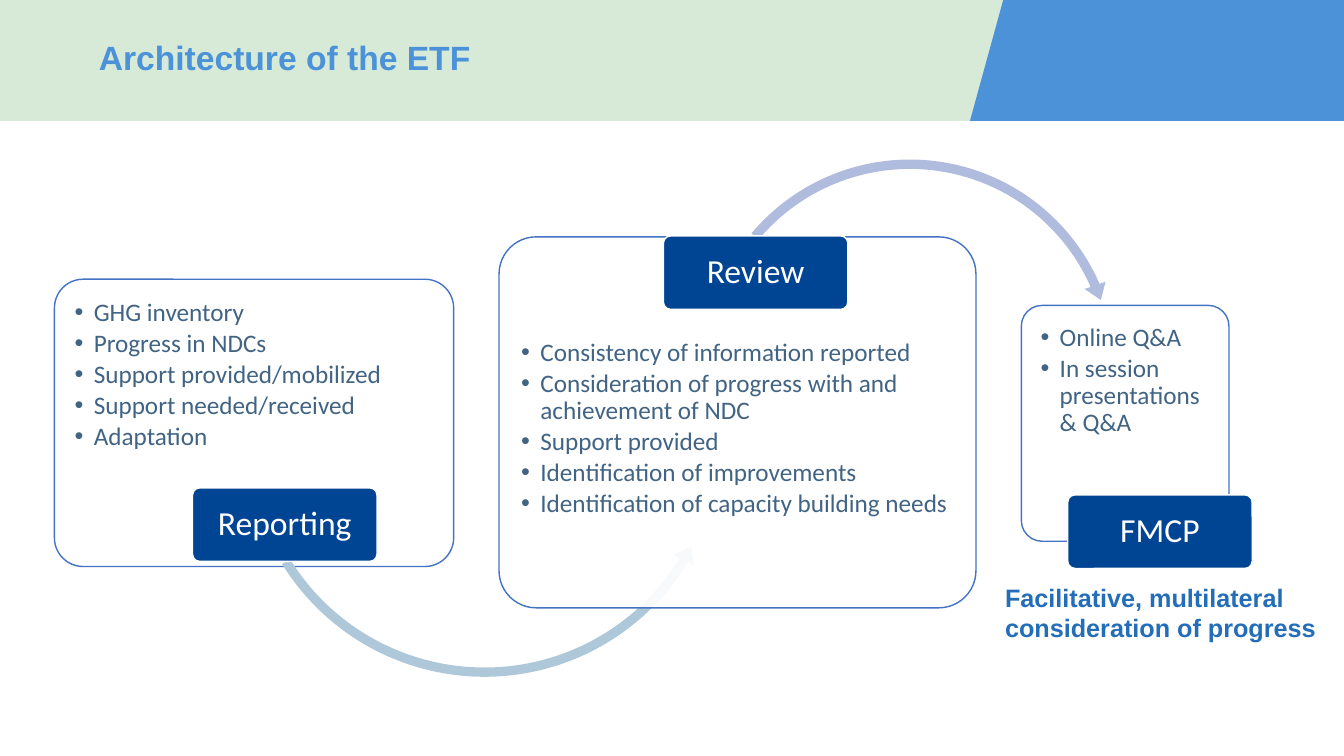
from lxml import etree
from pptx import Presentation
from pptx.dml.color import RGBColor
from pptx.enum.shapes import MSO_SHAPE
from pptx.enum.text import MSO_ANCHOR, PP_ALIGN
from pptx.oxml.ns import qn
from pptx.util import Inches, Pt

PALE_GREEN = RGBColor(0xD7, 0xEA, 0xD7)
SKY = RGBColor(0x4B, 0x92, 0xD8)
CAPTION_BLUE = RGBColor(0x24, 0x6E, 0xB9)
OUTLINE = RGBColor(0x44, 0x72, 0xC4)
NAVY = RGBColor(0x00, 0x44, 0x94)
SLATE = RGBColor(0x41, 0x64, 0x84)
TEAL = RGBColor(0xAE, 0xC8, 0xD9)
LILAC = RGBColor(0xB0, 0xBC, 0xDE)
WHITE = RGBColor(0xFF, 0xFF, 0xFF)

TITLE = "Architecture of the ETF"
CAPTION = "Facilitative, multilateral consideration of progress"
LABEL_SIZE = (1.83, 0.73)
BULLET_INDENT = Inches(0.19)

# Boxes are left, top, width, height; arrow adjustments follow the preset's order.
STAGES = [
    {
        "label": "Reporting", "label_at": (1.91, 4.84),
        "panel": (0.54, 2.77, 3.96, 2.85), "list": (0.6, 2.83, 3.83, 2.11),
        "items": ["GHG inventory", "Progress in NDCs", "Support provided/mobilized",
                  "Support needed/received", "Adaptation"],
        "arrow": (MSO_SHAPE.LEFT_CIRCULAR_ARROW, (2.38, 1.93, 4.85, 4.85), TEAL,
                  (0.019, 2.326, 18.798, 88.962, 0.023)),
    },
    {
        "label": "Review", "label_at": (6.58, 2.34),
        "panel": (4.95, 2.35, 4.73, 3.68), "list": (5.03, 3.23, 4.56, 2.72),
        "items": ["Consistency of information reported",
                  "Consideration of progress with and achievement of NDC",
                  "Support provided", "Identification of improvements",
                  "Identification of capacity building needs"],
        "arrow": (MSO_SHAPE.CIRCULAR_ARROW, (6.91, 1.52, 4.23, 4.23), LILAC,
                  (0.022, 2.682, 201.822, 132.014, 0.026)),
    },
    {
        "label": "FMCP", "label_at": (10.59, 4.91),
        "panel": (10.13, 3.03, 2.06, 2.34), "list": (10.18, 3.08, 1.95, 1.73),
        "items": ["Online Q&A", "In session presentations & Q&A"],
        "arrow": None,
    },
]


def paint(shape, fill, line=None):
    shape.shadow.inherit = False
    shape.fill.solid()
    shape.fill.fore_color.rgb = fill
    if line is None:
        shape.line.fill.background()
    else:
        shape.line.color.rgb = line
        shape.line.width = Pt(1)


def add_shape(slide, preset, box, fill, line=None, adjustments=()):
    shape = slide.shapes.add_shape(preset, *map(Inches, box))
    for index, value in enumerate(adjustments):
        shape.adjustments[index] = value
    paint(shape, fill, line)
    return shape


def set_insets(frame, across, down):
    frame.margin_left = frame.margin_right = Inches(across)
    frame.margin_top = frame.margin_bottom = Inches(down)
    frame.word_wrap = True


def set_font(para, name, size, color, bold=False):
    para.font.name = name
    para.font.size = Pt(size)
    para.font.color.rgb = color
    para.font.bold = bold


def add_bullet(para):
    props = para._p.get_or_add_pPr()
    props.set("marL", str(BULLET_INDENT))
    props.set("indent", str(-BULLET_INDENT))
    etree.SubElement(props, qn("a:buFont")).set("typeface", "Arial")
    etree.SubElement(props, qn("a:buChar")).set("char", "•")


def add_header(slide):
    add_shape(slide, MSO_SHAPE.RECTANGLE, (0, 0, 13.33, 1.2), PALE_GREEN)
    builder = slide.shapes.build_freeform(Inches(9.62), Inches(1.2))
    corners = [(9.95, 0), (13.33, 0), (13.33, 1.2)]
    builder.add_line_segments([(Inches(x), Inches(y)) for x, y in corners])
    paint(builder.convert_to_shape(), SKY)

    title = slide.shapes.title
    title.left, title.top, title.width, title.height = map(Inches, (0.98, 0.29, 7.85, 0.61))
    frame = title.text_frame
    frame.text = TITLE
    set_insets(frame, 0, 0)
    frame.vertical_anchor = MSO_ANCHOR.MIDDLE
    para = frame.paragraphs[0]
    para.alignment = PP_ALIGN.LEFT
    para.line_spacing = 0.9
    set_font(para, "Arial", 24, SKY, bold=True)
    # Bring the title in front of the header band
    slide.shapes._spTree.append(title._element)


def add_list(slide, box, items):
    frame = slide.shapes.add_textbox(*map(Inches, box)).text_frame
    set_insets(frame, 0.14, 0.14)
    frame.text = "\n".join(items)
    for para in frame.paragraphs:
        para.line_spacing = 0.9
        para.space_after = Pt(2.7)
        add_bullet(para)
        set_font(para, "Calibri", 18, SLATE)


def add_stage(slide, stage):
    panel = add_shape(slide, MSO_SHAPE.ROUNDED_RECTANGLE, stage["panel"], WHITE, OUTLINE, (0.1,))
    color = panel.fill._xPr.find(qn("a:solidFill"))[0]
    etree.SubElement(color, qn("a:alpha")).set("val", "90000")
    add_list(slide, stage["list"], stage["items"])
    if stage["arrow"]:
        preset, box, fill, adjustments = stage["arrow"]
        add_shape(slide, preset, box, fill, adjustments=adjustments)

    label = add_shape(slide, MSO_SHAPE.ROUNDED_RECTANGLE, stage["label_at"] + LABEL_SIZE,
                      NAVY, WHITE, (0.1,))
    frame = label.text_frame
    frame.text = stage["label"]
    set_insets(frame, 0.05, 0.03)
    frame.vertical_anchor = MSO_ANCHOR.MIDDLE
    para = frame.paragraphs[0]
    para.alignment = PP_ALIGN.CENTER
    para.line_spacing = 0.9
    set_font(para, "Calibri", 24, WHITE)


def add_caption(slide):
    frame = slide.shapes.add_textbox(*map(Inches, (9.87, 5.73, 3.31, 0.71))).text_frame
    frame.word_wrap = True
    frame.text = CAPTION
    set_font(frame.paragraphs[0], "Arial", 18, CAPTION_BLUE, bold=True)


def main():
    deck = Presentation()
    deck.slide_width, deck.slide_height = Inches(13.33), Inches(7.5)
    slide = deck.slides.add_slide(deck.slide_layouts[5])
    add_header(slide)
    add_caption(slide)
    for stage in STAGES:
        add_stage(slide, stage)
    deck.save("out.pptx")


if __name__ == "__main__":
    main()
